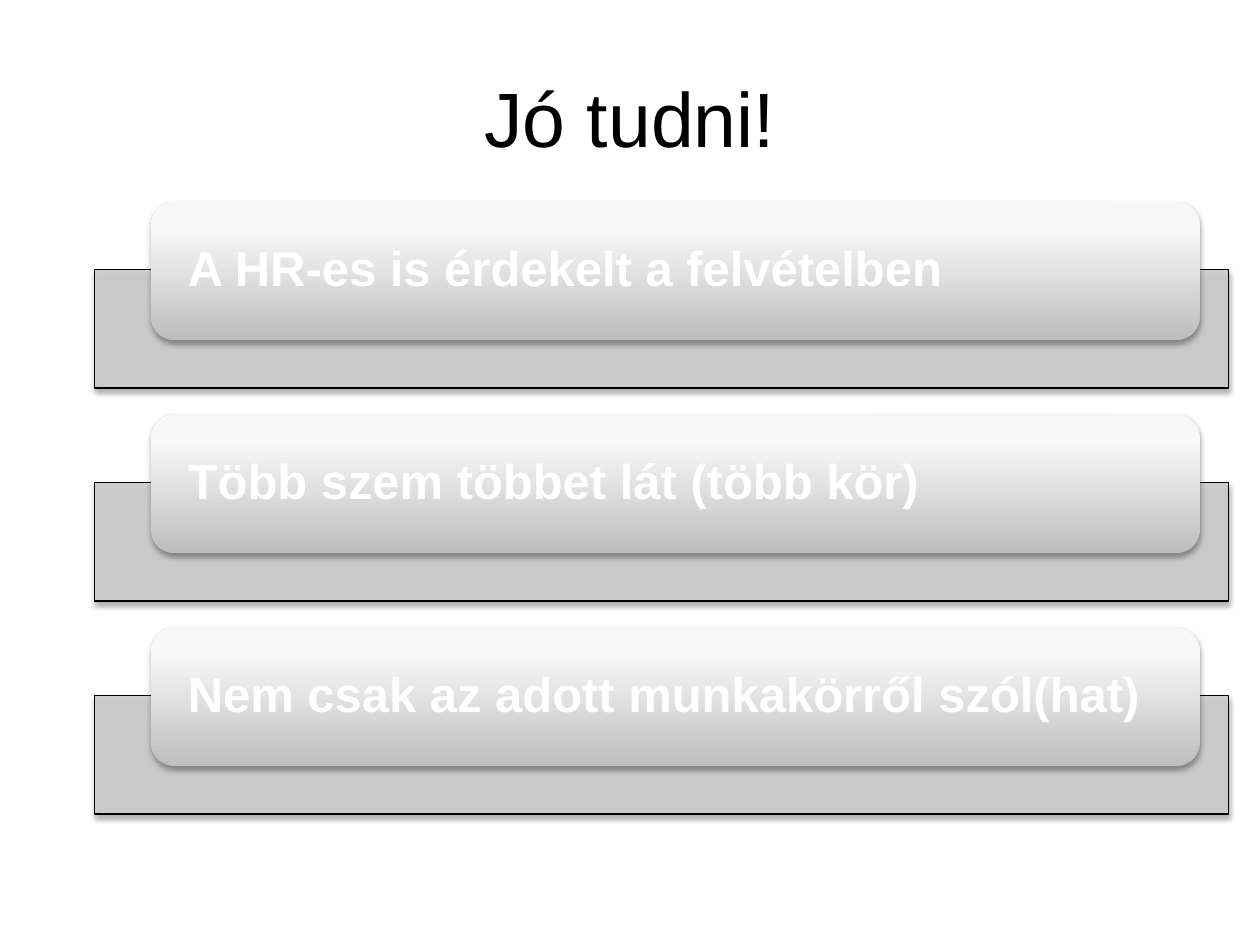
from lxml.etree import SubElement
from pptx import Presentation
from pptx.dml.color import RGBColor
from pptx.enum.shapes import MSO_SHAPE
from pptx.enum.text import MSO_ANCHOR, PP_ALIGN
from pptx.oxml.ns import qn
from pptx.util import Inches, Pt

BLACK = RGBColor(0x00, 0x00, 0x00)
WHITE = RGBColor(0xFF, 0xFF, 0xFF)
PANEL_GREY = RGBColor(0xCC, 0xCC, 0xCC)
CARD_STOPS = (
    (0, RGBColor(0xBE, 0xBE, 0xBE)),
    (80, RGBColor(0xF7, 0xF7, 0xF7)),
    (100, RGBColor(0xF8, 0xF8, 0xF8)),
)
TITLE_FONT = {"name": "Arial", "size": Pt(44), "bold": False}
CARD_FONT = {"name": "Arial", "size": Pt(28), "bold": True}
CARD_FRAME = {
    "word_wrap": True,
    "vertical_anchor": MSO_ANCHOR.MIDDLE,
    "margin_left": Inches(0.24),
    "margin_right": Inches(0.24),
    "margin_top": 0,
    "margin_bottom": 0,
}
STATEMENTS = (
    "A HR-es is érdekelt a felvételben",
    "Több szem többet lát (több kör)",
    "Nem csak az adott munkakörről szól(hat)",
)
FIRST_TOP = 1.6
ROW_PITCH = 1.69


def apply_format(target, values):
    """Set every attribute listed in values on target."""
    for name, value in values.items():
        setattr(target, name, value)


def write_text(text_frame, text, font_values, color):
    """Fill the first paragraph with formatted text and return it."""
    paragraph = text_frame.paragraphs[0]
    run = paragraph.add_run()
    run.text = text
    apply_format(run.font, font_values)
    run.font.color.rgb = color
    return paragraph


def add_color(parent, color, alpha=100):
    """Append an RGB colour with opacity in percent."""
    element = SubElement(parent, qn("a:srgbClr"), val=str(color))
    if alpha < 100:
        SubElement(element, qn("a:alpha"), val=str(alpha * 1000))


def add_shadow(shape):
    """Give the shape a soft shadow falling downwards."""
    shape.shadow.inherit = False
    effects = shape._element.spPr.find(qn("a:effectLst"))
    shadow = SubElement(
        effects, qn("a:outerShdw"), blurRad=str(Pt(3.1)), dist=str(Pt(1.8)),
        dir="5400000", rotWithShape="0",
    )
    add_color(shadow, BLACK, 35)


def add_title(slide, text):
    """Place and format the title placeholder."""
    title = slide.shapes.title
    apply_format(title, {
        "left": Inches(0.5), "top": Inches(0.3),
        "width": Inches(9), "height": Inches(1.25),
    })
    title.text_frame.vertical_anchor = MSO_ANCHOR.MIDDLE
    paragraph = write_text(title.text_frame, text, TITLE_FONT, BLACK)
    paragraph.alignment = PP_ALIGN.CENTER


def add_panel(slide, top):
    """Add the translucent grey panel behind a card."""
    panel = slide.shapes.add_shape(
        MSO_SHAPE.RECTANGLE, Inches(0.75), Inches(top), Inches(9), Inches(0.94)
    )
    panel.fill.solid()
    panel.fill.fore_color.rgb = PANEL_GREY
    color = panel._element.spPr.find(qn("a:solidFill")).find(qn("a:srgbClr"))
    SubElement(color, qn("a:alpha"), val="90000")
    panel.line.color.rgb = BLACK
    panel.line.width = Pt(0.75)
    add_shadow(panel)


def add_card(slide, top):
    """Add a rounded card with a vertical grey gradient."""
    card = slide.shapes.add_shape(
        MSO_SHAPE.ROUNDED_RECTANGLE,
        Inches(1.2), Inches(top), Inches(8.32), Inches(1.1),
    )
    card.fill.gradient()
    card.fill.gradient_angle = 90
    stops = card._element.spPr.find(qn("a:gradFill")).find(qn("a:gsLst"))
    stops.clear()
    for position, color in CARD_STOPS:
        stop = SubElement(stops, qn("a:gs"), pos=str(position * 1000))
        add_color(stop, color)
    card.line.fill.background()
    add_shadow(card)


def add_statement(slide, top, text):
    """Add the bold statement shown on a card."""
    box = slide.shapes.add_textbox(
        Inches(1.25), Inches(top), Inches(8.22), Inches(0.99)
    )
    apply_format(box.text_frame, CARD_FRAME)
    paragraph = write_text(box.text_frame, text, CARD_FONT, WHITE)
    apply_format(paragraph, {"alignment": PP_ALIGN.LEFT, "line_spacing": 0.9})


def main():
    """Build and save the slide."""
    presentation = Presentation()
    presentation.slide_width = Inches(10)
    presentation.slide_height = Inches(7.5)
    slide = presentation.slides.add_slide(presentation.slide_layouts[5])
    add_title(slide, "Jó tudni!")
    for index, statement in enumerate(STATEMENTS):
        top = FIRST_TOP + index * ROW_PITCH
        add_panel(slide, top + 0.54)
        add_card(slide, top)
        add_statement(slide, top + 0.05, statement)
    presentation.save("out.pptx")


if __name__ == "__main__":
    main()
